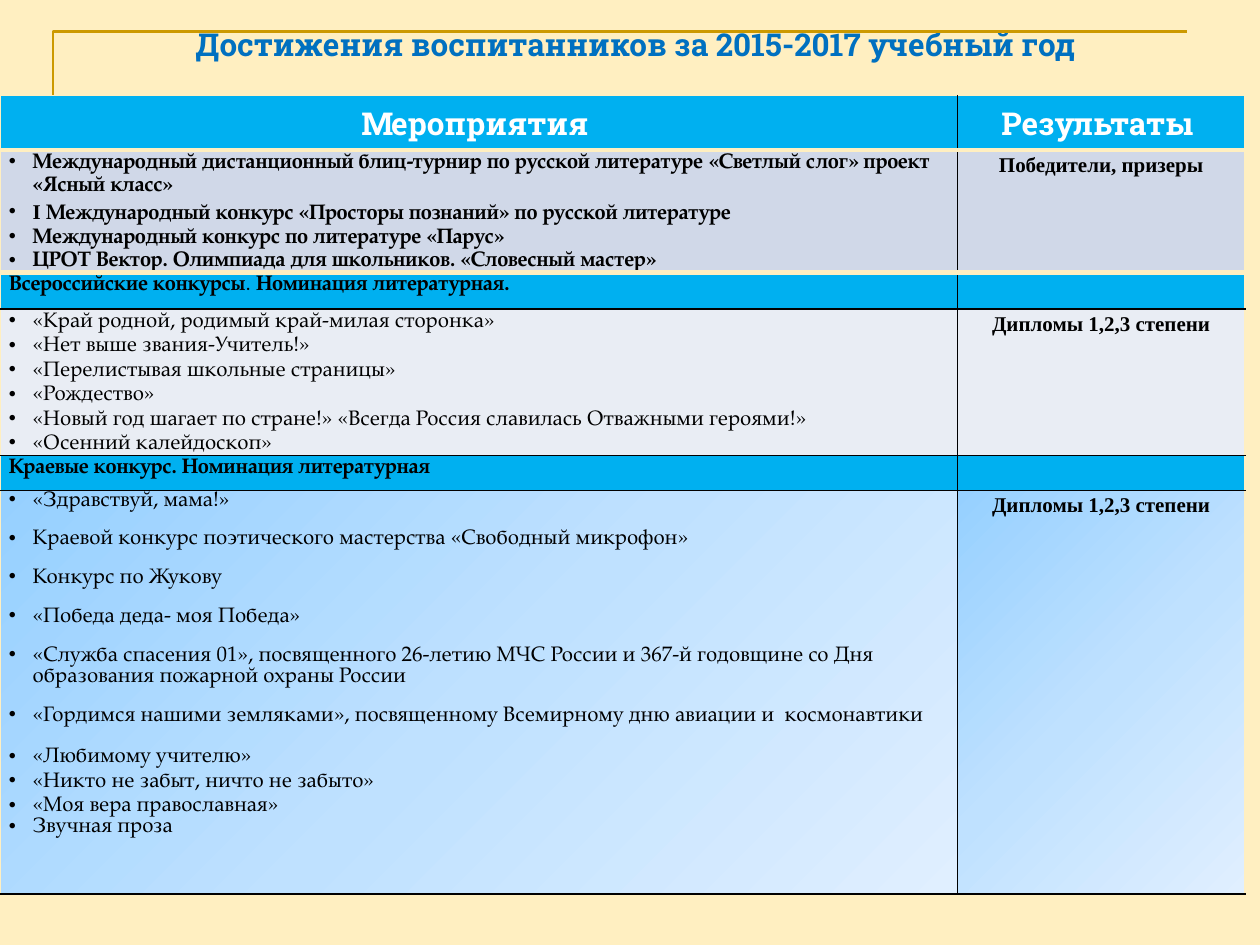
from lxml import etree
from pptx import Presentation
from pptx.dml.color import RGBColor
from pptx.enum.text import MSO_ANCHOR, PP_ALIGN
from pptx.oxml.ns import qn
from pptx.util import Inches, Pt

CENTER = PP_ALIGN.CENTER
LEFT = PP_ALIGN.LEFT
MIDDLE = MSO_ANCHOR.MIDDLE
SLAB, PAGELLA, TIMES = "Roboto Slab", "TeX Gyre Pagella", "Times New Roman"
CREAM, GOLD, BLUE, CYAN = "FFEFC1", "CC9900", "0070C0", "00B0F0"
BLACK, WHITE = "000000", "FFFFFF"
SKY = [(0, "96D0FF"), (50, "BFE1FF"), (100, "E0EFFF")]
COLS = [7.6, 2.28]
ROWS = [0.41, 0.97, 0.29, 1.16, 0.28, 3.2]
EDGES = [(CREAM, 1), (CREAM, 3), (CREAM, 3)] + [(BLACK, 1)] * 4
FILLS = [CYAN, "D0D8E8", CYAN, "E9EDF4", CYAN, SKY]

INTERNATIONAL = [
    [("Международный дистанционный блиц-турнир по русской литературе "
      "«Светлый слог» проект «Ясный класс»", PAGELLA, True)],
    [("I ", TIMES, True),
     ("Международный конкурс «Просторы познаний» по русской литературе", PAGELLA, True)],
    [("Международный конкурс по литературе «Парус»", PAGELLA, True)],
    [("ЦРОТ Вектор. Олимпиада для школьников. «Словесный мастер»", PAGELLA, True)],
]
NATIONAL_HEADING = [("Всероссийские конкурсы", PAGELLA, True), (". ", PAGELLA, False),
                    ("Номинация литературная.", PAGELLA, True)]
NATIONAL = [
    "«Край родной, родимый край-милая сторонка»",
    "«Нет выше звания-Учитель!»",
    "«Перелистывая школьные страницы»",
    "«Рождество»",
    "«Новый год шагает по стране!» «Всегда Россия славилась Отважными героями!»",
    "«Осенний калейдоскоп»",
]
REGIONAL_HEADING = [("Краевые конкурс. Номинация литературная", PAGELLA, True)]
REGIONAL_SPACED = [
    "«Здравствуй, мама!»",
    "Краевой конкурс поэтического мастерства «Свободный микрофон»",
    "Конкурс по Жукову",
    "«Победа деда- моя Победа»",
    "«Служба спасения 01», посвященного 26-летию МЧС России и 367-й годовщине "
    "со Дня образования пожарной охраны России",
    "«Гордимся нашими земляками», посвященному Всемирному дню авиации и  космонавтики",
]
REGIONAL_TIGHT = ["«Любимому учителю»", "«Никто не забыт, ничто не забыто»",
                  "«Моя вера православная»"]
REGIONAL_LAST = ["Звучная проза"]


def rgb(value):
    return RGBColor.from_string(value)


def add_run(p, text, font, bold, size=12, color=BLACK):
    r = p.add_run()
    r.text = text
    r.font.name, r.font.bold, r.font.size = font, bold, Pt(size)
    r.font.color.rgb = rgb(color)


def add_paragraph(cell, runs, align=LEFT, bullet=False, spaced=False):
    tf = cell.text_frame
    p = tf.paragraphs[0] if not tf.paragraphs[0].runs else tf.add_paragraph()
    p.alignment = align
    if spaced:
        p.space_after = Pt(10)
    else:
        p.line_spacing = 1.15
    if bullet:
        pPr = p._p.get_or_add_pPr()
        pPr.set("marL", str(Inches(0.19)))
        pPr.set("indent", str(-Inches(0.19)))
        etree.SubElement(pPr, qn("a:buChar")).set("char", "•")
    for text, font, bold in runs:
        add_run(p, text, font, bold)


def add_list(cell, items, spaced=False):
    for item in items:
        add_paragraph(cell, [(item, PAGELLA, False)], bullet=True, spaced=spaced)


def add_header(cell, text):
    p = cell.text_frame.paragraphs[0]
    p.alignment = CENTER
    add_run(p, text, SLAB, True, 18, WHITE)


def add_color(parent, value):
    etree.SubElement(parent, qn("a:srgbClr")).set("val", value)


def set_borders(cell, sides):
    tcPr = cell._tc.get_or_add_tcPr()
    for tag, (color, width) in zip(("a:lnL", "a:lnR", "a:lnT", "a:lnB"), sides):
        ln = etree.SubElement(tcPr, qn(tag))
        ln.set("w", str(Pt(width)))
        add_color(etree.SubElement(ln, qn("a:solidFill")), color)


def set_fill(cell, fill):
    if isinstance(fill, str):
        cell.fill.solid()
        cell.fill.fore_color.rgb = rgb(fill)
        return
    grad = etree.SubElement(cell._tc.get_or_add_tcPr(), qn("a:gradFill"))
    stops = etree.SubElement(grad, qn("a:gsLst"))
    for pos, color in fill:
        gs = etree.SubElement(stops, qn("a:gs"))
        gs.set("pos", str(pos * 1000))
        add_color(gs, color)
    etree.SubElement(grad, qn("a:lin")).set("ang", str(45 * 60000))


def add_results_table(slide):
    frame = slide.shapes.add_table(len(ROWS), len(COLS), 0, Inches(0.76),
                                   Inches(sum(COLS)), Inches(sum(ROWS)))
    table = frame.table
    for col, width in zip(table.columns, COLS):
        col.width = Inches(width)
    for i, height in enumerate(ROWS):
        table.rows[i].height = Inches(height)
        for j in range(len(COLS)):
            cell = table.cell(i, j)
            if i:
                cell.margin_left = cell.margin_right = Inches(0.07)
                cell.margin_top = cell.margin_bottom = 0
            left, right = [(CREAM, 1), (BLACK, 1)][::-1 if j else 1]
            set_borders(cell, [left, right, EDGES[i], EDGES[i + 1]])
            set_fill(cell, FILLS[i])
    return table


def fill_table(table):
    add_header(table.cell(0, 0), "Мероприятия ")
    add_header(table.cell(0, 1), "Результаты ")
    for runs in INTERNATIONAL:
        add_paragraph(table.cell(1, 0), runs, bullet=True)
    add_paragraph(table.cell(2, 0), NATIONAL_HEADING)
    add_list(table.cell(3, 0), NATIONAL)
    add_paragraph(table.cell(4, 0), REGIONAL_HEADING)
    regional = table.cell(5, 0)
    add_list(regional, REGIONAL_SPACED, spaced=True)
    add_list(regional, REGIONAL_TIGHT)
    add_list(regional, REGIONAL_LAST, spaced=True)
    diplomas = "Дипломы 1,2,3 степени"
    for row, text in ((1, "Победители, призеры"), (3, diplomas), (5, diplomas)):
        add_paragraph(table.cell(row, 1), [(text, TIMES, True)], CENTER)
    for row in (2, 4):
        p = table.cell(row, 1).text_frame.paragraphs[0]
        etree.SubElement(p._p, qn("a:endParaRPr")).set("sz", "1200")


def add_corner(slide):
    builder = slide.shapes.build_freeform(Inches(0.42), Inches(0.92))
    builder.add_line_segments([(Inches(0.42), Inches(0.25)),
                               (Inches(9.42), Inches(0.25))], close=False)
    sp = builder.convert_to_shape()
    sp.shadow.inherit = False
    sp.fill.background()
    sp.line.color.rgb = rgb(GOLD)
    sp.line.width = Pt(1.5)


def set_title(slide, text):
    sp = slide.shapes.title
    sp.left, sp.top, sp.width, sp.height = map(Inches, (0.67, 0.2, 8.75, 0.3))
    tf = sp.text_frame
    tf.word_wrap = True
    tf.vertical_anchor = MIDDLE
    tf.margin_top = tf.margin_bottom = 0
    p = tf.paragraphs[0]
    p.alignment = CENTER
    add_run(p, text, SLAB, True, 18, BLUE)


def main():
    prs = Presentation()
    prs.slide_width, prs.slide_height = Inches(10), Inches(7.5)
    slide = prs.slides.add_slide(prs.slide_layouts[5])
    slide.background.fill.solid()
    slide.background.fill.fore_color.rgb = rgb(CREAM)
    add_corner(slide)
    set_title(slide, "Достижения воспитанников за 2015-2017 учебный год")
    fill_table(add_results_table(slide))
    prs.save("out.pptx")


if __name__ == "__main__":
    main()
